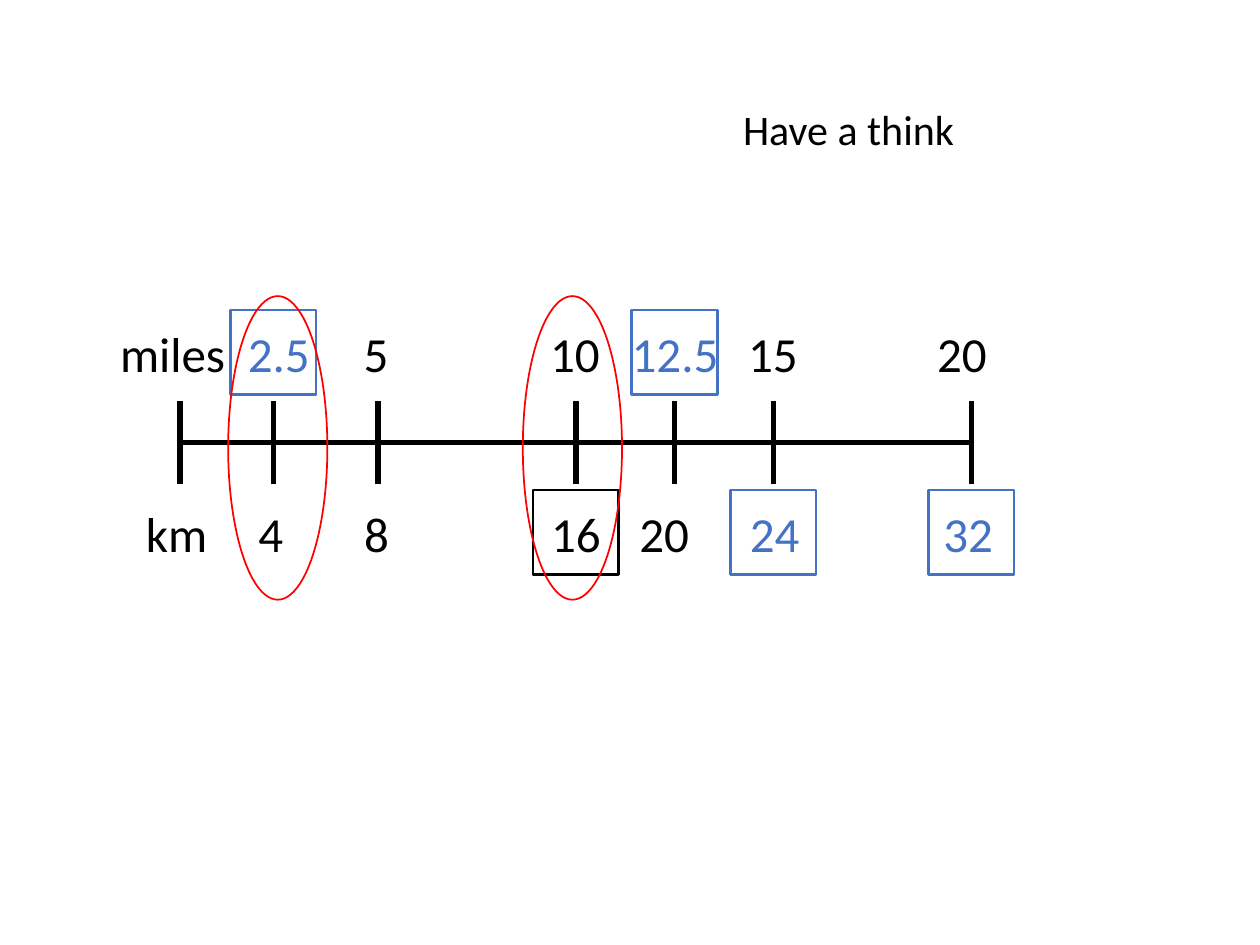
import pptx
import pptx.dml.color
import pptx.enum.shapes
import pptx.enum.text
import pptx.oxml.ns
import pptx.util
from lxml import etree

Cm = pptx.util.Cm
Pt = pptx.util.Pt
RGBColor = pptx.dml.color.RGBColor
SHAPE = pptx.enum.shapes.MSO_SHAPE
ALIGN = pptx.enum.text.PP_ALIGN

BLACK = RGBColor(0x00, 0x00, 0x00)
BLUE = RGBColor(0x44, 0x72, 0xC4)
RED = RGBColor(0xFF, 0x00, 0x00)

TICKS = [0, 1.88, 3.99, 7.98, 9.97, 11.96, 15.95]
MILES = [
    ("miles", -0.15, BLACK, None),
    ("2.5", 1.99, BLUE, BLUE),
    ("5", 3.95, BLACK, None),
    ("10", 7.96, BLACK, None),
    ("12.5", 9.98, BLUE, BLUE),
    ("15", 11.95, BLACK, None),
    ("20", 15.76, BLACK, None),
]
KM = [
    ("km", -0.07, BLACK, None),
    ("4", 1.83, BLACK, None),
    ("8", 3.96, BLACK, None),
    ("16", 7.98, BLACK, BLACK),
    ("20", 9.76, BLACK, None),
    ("24", 11.99, BLUE, BLUE),
    ("32", 15.89, BLUE, BLUE),
]
RING_CENTRES = [7.91, 1.97]


def add_text(s, text, left, top, width, height, size, color, align, wrap):
    tb = s.shapes.add_textbox(Cm(left), Cm(top), Cm(width), Cm(height))
    tf = tb.text_frame
    tf.word_wrap = wrap
    p = tf.paragraphs[0]
    p.text = text
    p.alignment = align
    p.font.name = "Calibri"
    p.font.size = Pt(size)
    p.font.color.rgb = color


def add_line(s, x1, y1, x2, y2):
    line = s.shapes.add_connector(
        pptx.enum.shapes.MSO_CONNECTOR.STRAIGHT, Cm(x1), Cm(y1), Cm(x2), Cm(y2))
    line.line.color.rgb = BLACK
    line.line.width = Pt(3)
    etree.SubElement(line._element.spPr, pptx.oxml.ns.qn("a:effectLst"))


def add_outline(s, kind, centre, top, width, height, color, weight):
    sp = s.shapes.add_shape(
        kind, Cm(centre - width / 2), Cm(top), Cm(width), Cm(height))
    sp.shadow.inherit = False
    sp.fill.background()
    sp.line.color.rgb = color
    sp.line.width = Pt(weight)


def add_label_row(s, left, top, labels):
    for tick, (text, centre, color, frame) in zip(TICKS, labels):
        width = 0.74 + 0.5 * len(text)
        add_text(s, text, left + centre - width / 2, top, width, 1.45,
                 28, color, ALIGN.CENTER, False)
        if frame is not None:
            add_outline(s, SHAPE.RECTANGLE, left + tick, top - 0.15,
                        1.73, 1.7, frame, 1.5)


def add_number_line(s, left, top, width, height):
    axis = top + 2.95
    add_line(s, left, axis, left + width, axis)
    for tick in TICKS:
        add_line(s, left + tick, axis + 0.84, left + tick, axis - 0.84)
    add_label_row(s, left, top + 0.43, MILES)
    add_label_row(s, left, top + 4.06, KM)
    for centre in RING_CENTRES:
        add_outline(s, SHAPE.OVAL, left + centre, top, 2.0, height, RED, 1)


def add_prompt(s, left, top, width, height):
    add_text(s, "Have a think", left, top, width, height,
             24, BLACK, ALIGN.LEFT, True)


def main():
    prs = pptx.Presentation()
    prs.slide_width = Cm(25.4)
    prs.slide_height = Cm(19.05)
    s = prs.slides.add_slide(prs.slide_layouts[6])
    add_prompt(s, 14.73, 1.96, 5.82, 1.27)
    add_number_line(s, 3.63, 5.97, 15.95, 6.12)
    prs.save("out.pptx")


if __name__ == "__main__":
    main()
